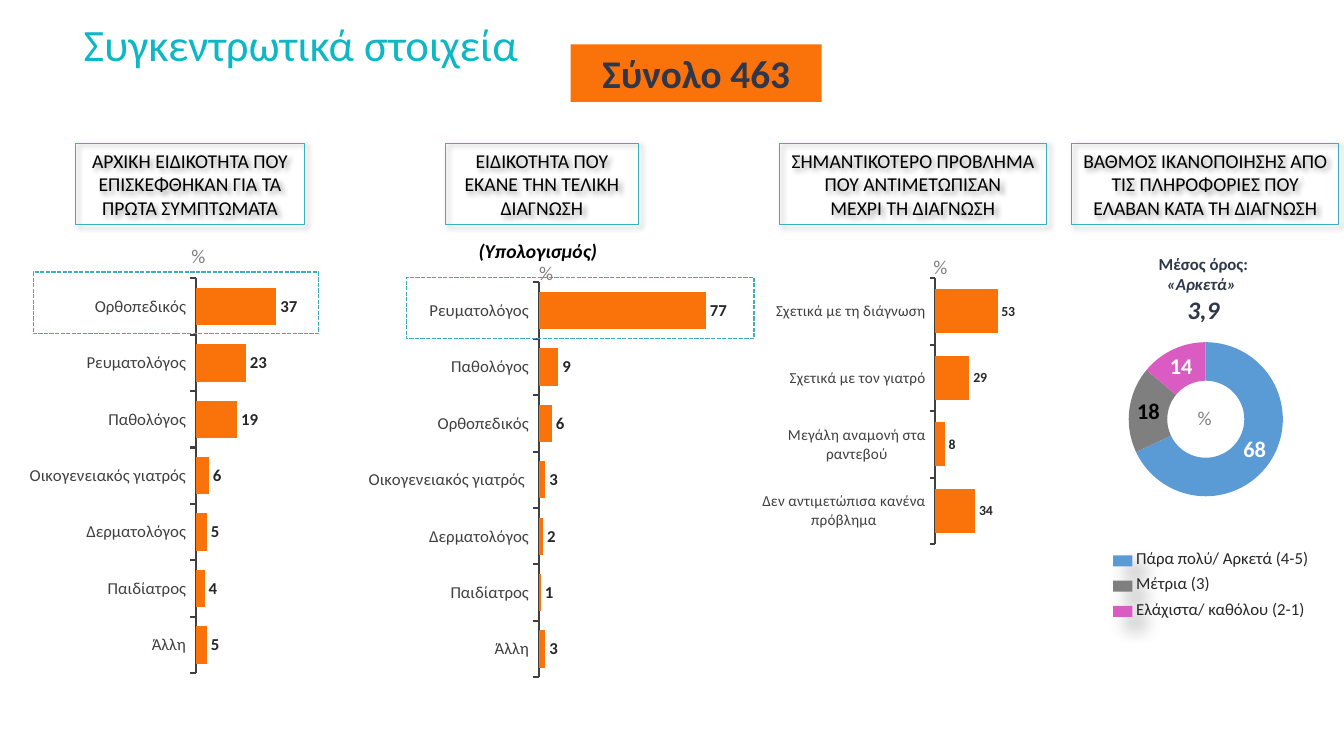
from dataclasses import dataclass

from lxml.etree import SubElement
from pptx import Presentation
from pptx.chart.data import CategoryChartData
from pptx.dml.color import RGBColor
from pptx.enum.chart import XL_CHART_TYPE as ChartKind
from pptx.enum.chart import XL_LABEL_POSITION as LabelSpot
from pptx.enum.chart import XL_TICK_MARK as TickMark
from pptx.enum.dml import MSO_LINE
from pptx.enum.shapes import MSO_SHAPE
from pptx.enum.text import MSO_ANCHOR as Anchor
from pptx.enum.text import MSO_AUTO_SIZE as AutoSize
from pptx.enum.text import PP_ALIGN as Align
from pptx.oxml import parse_xml
from pptx.oxml.ns import nsdecls, qn
from pptx.util import Pt

PX = 9144  # 100 px to the inch
FONT = "Calibri"
COLORS = {
    "title": "0DB7C4", "frame": "3BAFBF", "bar": "FA730A", "navy": "2F384B",
    "black": "000000", "white": "FFFFFF", "label": "262626", "axis": "404040",
    "percent": "808080", "high": "5B9BD5", "medium": "7F7F7F", "low": "DA5CC2",
}


@dataclass(frozen=True)
class Area:
    left: int
    top: int
    width: int
    height: int

    def emu(self) -> list[int]:
        return [side * PX for side in (self.left, self.top, self.width, self.height)]


@dataclass(frozen=True)
class Shadow:
    alpha: int
    blur: int
    distance: int
    angle: int


@dataclass(frozen=True)
class Header:
    left: int
    width: int
    lines: tuple[str, ...]


@dataclass(frozen=True)
class BarPanel:
    area: Area
    plot: tuple[float, float, float, float]
    axis_size: int
    label_size: int
    values: dict[str, int]


@dataclass(frozen=True)
class Grade:
    name: str
    value: int
    color: str


TEXT_SHADOW = Shadow(40, 4, 3, 45)
KEY_SHADOW = Shadow(38, 14, 12, 40)
WIDE_PLOT = (0.445, 0, 0.555, 1)

HEADERS = [
    Header(75, 227, ("ΑΡΧΙΚΗ ΕΙΔΙΚΟΤΗΤΑ ΠΟΥ ΕΠΙΣΚΕΦΘΗΚΑΝ ΓΙΑ ΤΑ ΠΡΩΤΑ ΣΥΜΠΤΩΜΑΤΑ",)),
    Header(442, 191, ("ΕΙΔΙΚΟΤΗΤΑ ΠΟΥ ΕΚΑΝΕ ΤΗΝ ΤΕΛΙΚΗ ΔΙΑΓΝΩΣΗ",)),
    Header(773, 265, ("ΣΗΜΑΝΤΙΚΟΤΕΡΟ ΠΡΟΒΛΗΜΑ ΠΟΥ ΑΝΤΙΜΕΤΩΠΙΣΑΝ", "ΜΕΧΡΙ ΤΗ ΔΙΑΓΝΩΣΗ")),
    Header(1063, 265, ("ΒΑΘΜΟΣ ΙΚΑΝΟΠΟΙΗΣΗΣ ΑΠΟ ΤΙΣ ΠΛΗΡΟΦΟΡΙΕΣ ΠΟΥ ΕΛΑΒΑΝ ΚΑΤΆ ΤΗ ΔΙΑΓΝΩΣΗ",)),
]
PANELS = [
    BarPanel(Area(756, 275, 313, 266), (0.541, 0, 0.454, 1), 11, 10, {
        "Σχετικά με τη διάγνωση": 53, "Σχετικά με τον γιατρό": 29,
        "Μεγάλη αναμονή στα ραντεβού": 8, "Δεν αντιμετώπισα κανένα πρόβλημα": 34}),
    BarPanel(Area(-13, 275, 466, 394), WIDE_PLOT, 12, 12, {
        "Ορθοπεδικός": 37, "Ρευματολόγος": 23, "Παθολόγος": 19,
        "Οικογενειακός γιατρός": 6, "Δερματολόγος": 5, "Παιδίατρος": 4, "Άλλη": 5}),
    BarPanel(Area(327, 279, 466, 394), WIDE_PLOT, 12, 12, {
        "Ρευματολόγος": 77, "Παθολόγος": 9, "Ορθοπεδικός": 6,
        "Οικογενειακός γιατρός ": 3, "Δερματολόγος": 2, "Παιδίατρος": 1, "Άλλη": 3}),
]
GRADES = [
    Grade("Πάρα πολύ/ Αρκετά (4-5)", 68, "high"),
    Grade("Μέτρια (3)", 18, "medium"),
    Grade("Ελάχιστα/ καθόλου (2-1)", 14, "low"),
]
HIGHLIGHTS = [Area(33, 270, 283, 61), Area(403, 275, 345, 61)]
PERCENTS = [(180, 237), (525, 254), (916, 248), (1178, 398)]


def rgb(name: str) -> RGBColor:
    return RGBColor.from_string(COLORS[name])


def style(font, size: int, color: str, bold: bool = False, italic: bool = False) -> None:
    font.name, font.size, font.bold, font.italic = FONT, Pt(size), bold, italic
    font.color.rgb = rgb(color)


def write(frame, text: str, *, size: int, color: str, bold=False, italic=False,
          align=Align.LEFT, spacing=None, first=True) -> None:
    para = frame.paragraphs[0] if first else frame.add_paragraph()
    para.alignment = align
    if spacing:
        para.line_spacing = spacing
    span = para.add_run()
    span.text = text
    style(span.font, size, color, bold, italic)


def add_text(page, area: Area, text: str, *, wrap: bool = True, **look):
    frame = page.shapes.add_textbox(*area.emu()).text_frame
    frame.word_wrap = wrap
    write(frame, text, **look)
    return frame


def add_box(page, area: Area, *, fill=None, line=None, weight=1.0, dash=None, shadow=None):
    box = page.shapes.add_shape(MSO_SHAPE.RECTANGLE, *area.emu())
    box.shadow.inherit = False
    if fill:
        box.fill.solid()
        box.fill.fore_color.rgb = rgb(fill)
    else:
        box.fill.background()
    if line:
        box.line.color.rgb = rgb(line)
        box.line.width = Pt(weight)
        box.line.dash_style = dash
    else:
        box.line.fill.background()
    if shadow:
        effects = next(box.element.iter(qn("a:effectLst")))
        outer = SubElement(effects, qn("a:outerShdw"), blurRad=str(Pt(shadow.blur)),
                           dist=str(Pt(shadow.distance)), dir=str(shadow.angle * 60000),
                           algn="tl", rotWithShape="0")
        tint = SubElement(outer, qn("a:srgbClr"), val=COLORS["black"])
        SubElement(tint, qn("a:alpha"), val=str(shadow.alpha * 1000))
    return box


def add_chart(page, area: Area, kind, values: dict[str, int], plot_area):
    """Add a clear, legend-free chart with a fixed inner plot area."""
    data = CategoryChartData(number_format="#,##0")
    data.categories = list(values)
    data.add_series("Series 1", list(values.values()))
    chart = page.shapes.add_chart(kind, *area.emu(), data).chart
    chart.has_legend = chart.has_title = False
    style(chart.font, 10, "black")
    root = chart.element
    root.find(qn("c:chart")).addnext(parse_xml(
        f'<c:spPr {nsdecls("c", "a")}><a:noFill/><a:ln><a:noFill/></a:ln></c:spPr>'))
    holder = next(root.iter(qn("c:plotArea")))
    for old in holder.findall(qn("c:layout")):
        holder.remove(old)
    settings = [("layoutTarget", "inner"), ("xMode", "edge"), ("yMode", "edge"),
                *zip("xywh", plot_area)]
    inner = "".join(f'<c:{key} val="{value}"/>' for key, value in settings)
    holder.insert(0, parse_xml(
        f'<c:layout {nsdecls("c")}><c:manualLayout>{inner}</c:manualLayout></c:layout>'))
    return chart


def show_values(plot, size: int, color: str) -> None:
    plot.has_data_labels = True
    labels = plot.data_labels
    labels.show_value, labels.show_percentage = True, False
    labels.number_format, labels.number_format_is_linked = "#,##0", False
    style(labels.font, size, color, bold=True)


def add_bars(page, panel: BarPanel) -> None:
    chart = add_chart(page, panel.area, ChartKind.BAR_CLUSTERED, panel.values, panel.plot)
    plot = chart.plots[0]
    plot.gap_width, plot.vary_by_categories = 51, False
    fill = plot.series[0].format.fill
    fill.solid()
    fill.fore_color.rgb = rgb("bar")
    show_values(plot, panel.label_size, "label")
    plot.data_labels.position = LabelSpot.OUTSIDE_END
    names, scale = chart.category_axis, chart.value_axis
    names.reverse_order, names.has_major_gridlines = True, False
    names.major_tick_mark, names.minor_tick_mark = TickMark.OUTSIDE, TickMark.NONE
    names.format.line.color.rgb = rgb("axis")
    names.format.line.width = Pt(1.5)
    style(names.tick_labels.font, panel.axis_size, "axis")
    scale.minimum_scale, scale.maximum_scale, scale.major_unit = 0, 120, 10
    scale.has_major_gridlines = scale.visible = False


def add_satisfaction(page) -> None:
    values = {str(number): grade.value for number, grade in enumerate(GRADES, 1)}
    chart = add_chart(page, Area(1062, 327, 265, 178), ChartKind.DOUGHNUT, values,
                      (0.217, 0.067, 0.577, 0.866))
    plot = chart.plots[0]
    show_values(plot, 16, "white")
    points = plot.series[0].points
    for index, grade in enumerate(GRADES):
        fill = points[index].format.fill
        fill.solid()
        fill.fore_color.rgb = rgb(grade.color)
        style(points[index].data_label.font, 16,
              "black" if grade.color == "medium" else "white", bold=True)
        top = 541 + 25 * index
        add_box(page, Area(1104, top + 10, 19, 11), fill=grade.color, shadow=KEY_SHADOW)
        add_text(page, Area(1117, top, 210, 28), grade.name, size=12, color="label", spacing=0.9)
    frame = add_text(page, Area(1082, 247, 223, 81), "Μέσος όρος:", size=12, color="navy",
                     bold=True, align=Align.CENTER)
    for text, size in (("«Αρκετά» ", 12), ("3,9", 18)):
        write(frame, text, size=size, color="navy", bold=True, italic=True,
              align=Align.CENTER, first=False)


def main() -> None:
    deck = Presentation()
    deck.slide_width, deck.slide_height = 1333 * PX, 750 * PX
    page = deck.slides.add_slide(deck.slide_layouts[5])
    title = page.shapes.title
    title.left, title.top, title.width, title.height = Area(73, 13, 1176, 67).emu()
    frame = title.text_frame
    frame.auto_size, frame.vertical_anchor = AutoSize.NONE, Anchor.BOTTOM
    frame.margin_left = frame.margin_right = frame.margin_top = frame.margin_bottom = 10 * PX
    write(frame, "Συγκεντρωτικά στοιχεία", size=32, color="title")
    for header in HEADERS:
        box = add_box(page, Area(header.left, 142, header.width, 81), line="frame",
                      weight=0.75, shadow=TEXT_SHADOW)
        for index, line in enumerate(header.lines):
            write(box.text_frame, line, size=14, color="black", align=Align.CENTER,
                  first=index == 0)
    add_satisfaction(page)
    for panel in PANELS:
        add_bars(page, panel)
    for area in HIGHLIGHTS:
        add_box(page, area, line="frame", dash=MSO_LINE.SQUARE_DOT)
    total = add_box(page, Area(566, 44, 249, 57), fill="bar")
    write(total.text_frame, "Σύνολο 463", size=28, color="navy", bold=True, align=Align.CENTER)
    add_text(page, Area(457, 232, 153, 34), "(Υπολογισμός)", size=14, color="black",
             bold=True, italic=True, align=Align.CENTER)
    for left, top in PERCENTS:
        add_text(page, Area(left, top, 34, 34), "%", wrap=False, size=14, color="percent")
    deck.save("out.pptx")


if __name__ == "__main__":
    main()
